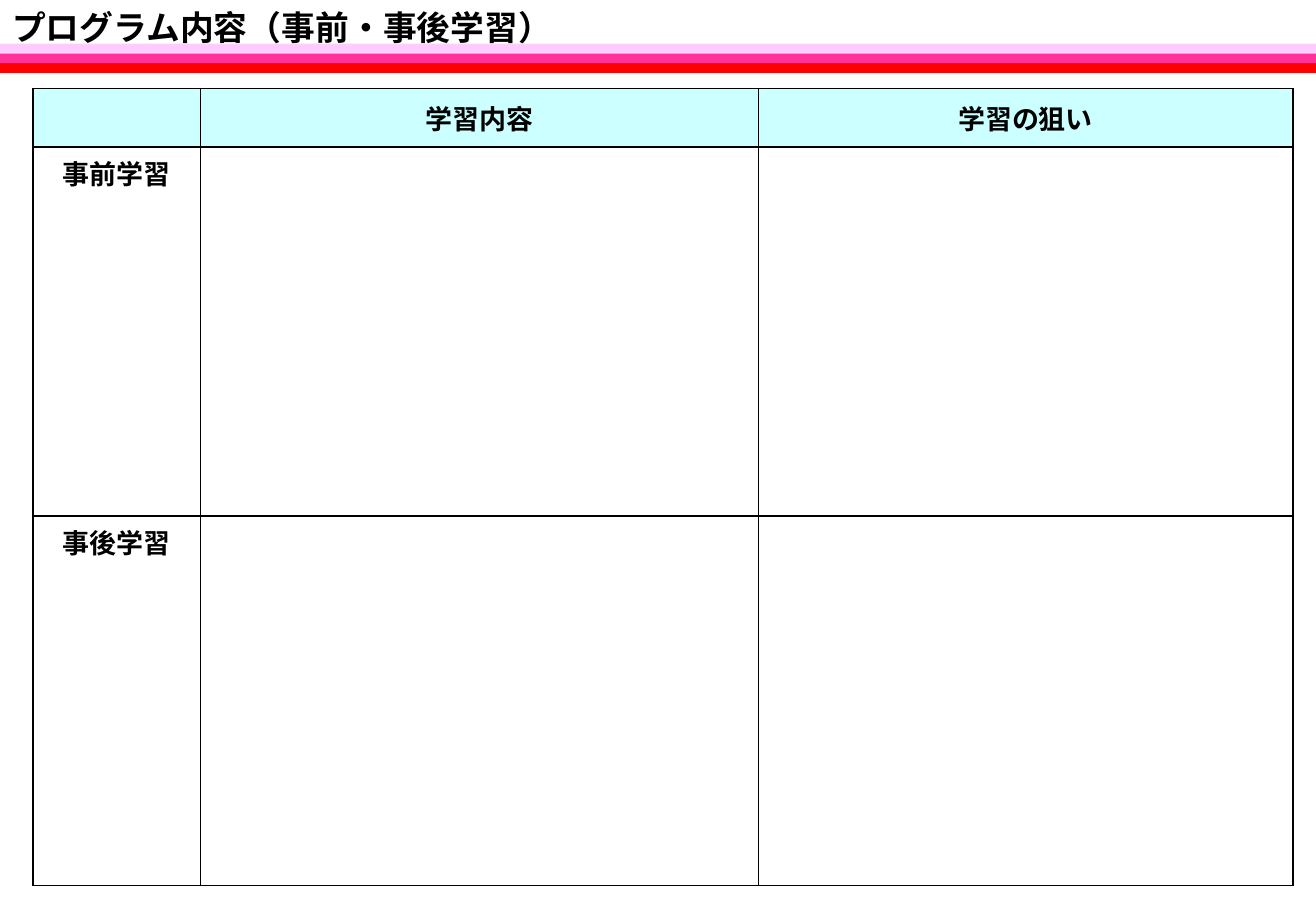
from lxml.etree import SubElement
from pptx import Presentation
from pptx.dml.color import RGBColor
from pptx.enum.shapes import MSO_SHAPE
from pptx.enum.text import MSO_ANCHOR, MSO_AUTO_SIZE, PP_ALIGN
from pptx.oxml import parse_xml
from pptx.oxml.ns import nsdecls, qn
from pptx.util import Emu, Pt

PX = 9144  # 100 px to the inch
FONT = "Noto Sans CJK JP"


def color(value):
    return RGBColor.from_string(value)


def write(text_frame, text, size, align=PP_ALIGN.LEFT):
    paragraph = text_frame.paragraphs[0]
    paragraph.alignment = align
    run = paragraph.add_run()
    run.text = text
    run.font.size = Pt(size)
    run.font.bold = True
    run.font.name = FONT
    run.font.color.rgb = color("000000")
    SubElement(run.font._element, qn("a:ea"), typeface=FONT)


presentation = Presentation()
presentation.slide_width = Emu(1083 * PX)
presentation.slide_height = Emu(750 * PX)
slide = presentation.slides.add_slide(presentation.slide_layouts[5])

# Title stripes
for top, stripe_color in ((52, "FF0000"), (44, "FF3399"), (36, "FFCCFF")):
    stripe = slide.shapes.add_shape(
        MSO_SHAPE.RECTANGLE, 0, top * PX, 1083 * PX, 8 * PX)
    stripe.shadow.inherit = False
    stripe.fill.solid()
    stripe.fill.fore_color.rgb = color(stripe_color)
    stripe.line.fill.background()

# Title, in front of the stripes
title = slide.shapes.title
stripe.element.addnext(title.element)
title.left, title.top, title.width, title.height = (
    Emu(length * PX) for length in (0, 0, 975, 44))
title.text_frame.auto_size = MSO_AUTO_SIZE.NONE
title.text_frame.vertical_anchor = MSO_ANCHOR.MIDDLE
write(title.text_frame, "プログラム内容（事前・事後学習）", 20)

# Study table
rows = (
    ("", "学習内容", "学習の狙い"),
    ("事前学習", "", ""),
    ("事後学習", "", ""),
)
column_widths = (138, 459, 440)
row_heights = (48, 304, 304)
table = slide.shapes.add_table(
    len(rows), len(column_widths), 27 * PX, 73 * PX,
    sum(column_widths) * PX, sum(row_heights) * PX).table
for column, width in zip(table.columns, column_widths):
    column.width = Emu(width * PX)

for row_index, texts in enumerate(rows):
    table.rows[row_index].height = Emu(row_heights[row_index] * PX)
    for column_index, text in enumerate(texts):
        cell = table.cell(row_index, column_index)
        if row_index == 0:
            cell.vertical_anchor = MSO_ANCHOR.MIDDLE
            cell.fill.solid()
            cell.fill.fore_color.rgb = color("CCFFFF")
        else:
            cell.vertical_anchor = MSO_ANCHOR.TOP
            cell.fill.background()
        if text:
            write(cell.text_frame, text, 16, PP_ALIGN.CENTER)
        properties = cell._tc.get_or_add_tcPr()
        for position, side in enumerate(("lnL", "lnR", "lnT", "lnB")):
            properties.insert(position, parse_xml(
                f'<a:{side} {nsdecls("a")} w="{Pt(1)}"><a:solidFill>'
                f'<a:srgbClr val="000000"/></a:solidFill></a:{side}>'))

presentation.save("out.pptx")
